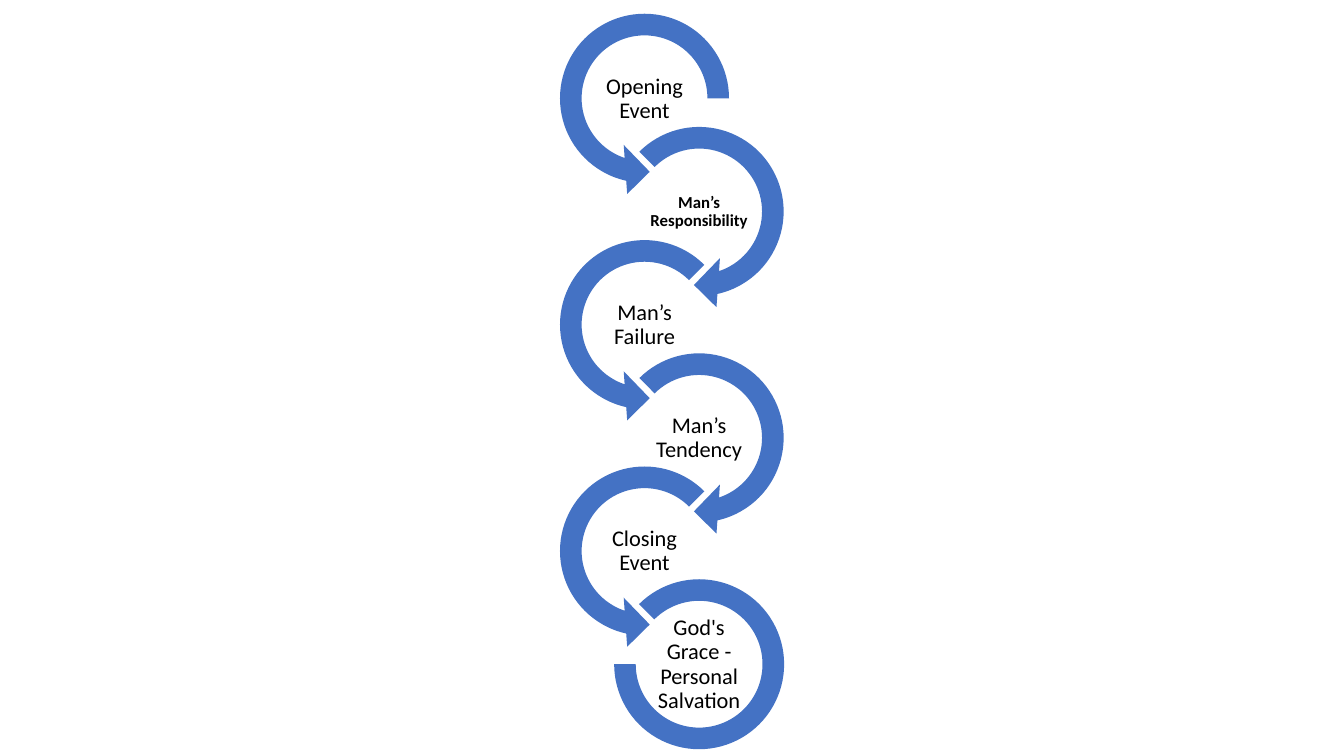
from dataclasses import dataclass

from pptx import Presentation
from pptx.dml.color import RGBColor
from pptx.enum.shapes import MSO_SHAPE
from pptx.enum.text import MSO_ANCHOR, PP_ALIGN
from pptx.util import Pt


@dataclass(frozen=True)
class Theme:
    """Colours, font and type sizes of the slide."""
    ring: RGBColor = RGBColor(0x44, 0x72, 0xC4)
    ink: RGBColor = RGBColor(0, 0, 0)
    font: str = "Calibri"
    label_size: float = 16
    small_size: float = 12


THEME = Theme()
RING = 140.4
PITCH = 80.85
SWAY = 39
LEFT_ARROW = MSO_SHAPE.LEFT_CIRCULAR_ARROW, (0.11, 11.42, 63, 189, 0.125)
RIGHT_ARROW = MSO_SHAPE.CIRCULAR_ARROW, (0.11, 11.42, 45, 135, 0.125)
FIRST_ARROW = MSO_SHAPE.LEFT_CIRCULAR_ARROW, (0.11, 11.42, 63, 0, 0.125)
LAST_ARC = MSO_SHAPE.BLOCK_ARC, (135, 108, 0.127)
SMALL_BOLD = {"size": THEME.small_size, "bold": True, "inset": 0}
STEPS = [
    ("Opening Event", FIRST_ARROW, {}),
    ("Man’s Responsibility", RIGHT_ARROW, SMALL_BOLD),
    ("Man’s Failure", LEFT_ARROW, {}),
    ("Man’s Tendency", RIGHT_ARROW, {}),
    ("Closing Event", LEFT_ARROW, {}),
    ("God's Grace - Personal Salvation", LAST_ARC, {}),
]


def add_label(slide, text, left, top, width, height, *,
              size=THEME.label_size, bold=False, inset=0.8):
    """Write centred text in the given box."""
    frame = slide.shapes.add_textbox(Pt(left), Pt(top), Pt(width), Pt(height)).text_frame
    frame.word_wrap = True
    frame.vertical_anchor = MSO_ANCHOR.MIDDLE
    frame.margin_left = frame.margin_right = Pt(inset)
    frame.margin_top = frame.margin_bottom = Pt(inset)
    paragraph = frame.paragraphs[0]
    paragraph.alignment = PP_ALIGN.CENTER
    paragraph.line_spacing = 0.9
    run = paragraph.add_run()
    run.text = text
    run.font.name = THEME.font
    run.font.size = Pt(size)
    run.font.bold = bold
    run.font.color.rgb = THEME.ink


def add_ring(slide, outline, left, top, size):
    """Draw one circular arrow or arc in a square box."""
    preset, adjustments = outline
    ring = slide.shapes.add_shape(preset, Pt(left), Pt(top), Pt(size), Pt(size))
    for index, value in enumerate(adjustments):
        ring.adjustments[index] = value
    ring.fill.solid()
    ring.fill.fore_color.rgb = THEME.ring
    ring.line.fill.background()
    ring.shadow.inherit = False


def add_step(slide, text, outline, label_format, left, top):
    """Place a ring and its label in a step box."""
    margin = 9.5 if outline is LAST_ARC else 0
    add_ring(slide, outline, left + margin, top + margin, RING - 2 * margin)
    add_label(slide, text, left + 31, top + 51, 78.4, 39.2, **label_format)


def add_process(slide, left, top):
    """Stack the steps downward, swaying left and right."""
    for index, (text, outline, label_format) in enumerate(STEPS):
        add_step(slide, text, outline, label_format,
                 left + index % 2 * SWAY, top + index * PITCH)


def main():
    """Build and save the slide."""
    presentation = Presentation()
    presentation.slide_width = Pt(960)
    presentation.slide_height = Pt(540)
    slide = presentation.slides.add_slide(presentation.slide_layouts[6])
    add_process(slide, 390.2, 0)
    presentation.save("out.pptx")


if __name__ == "__main__":
    main()
